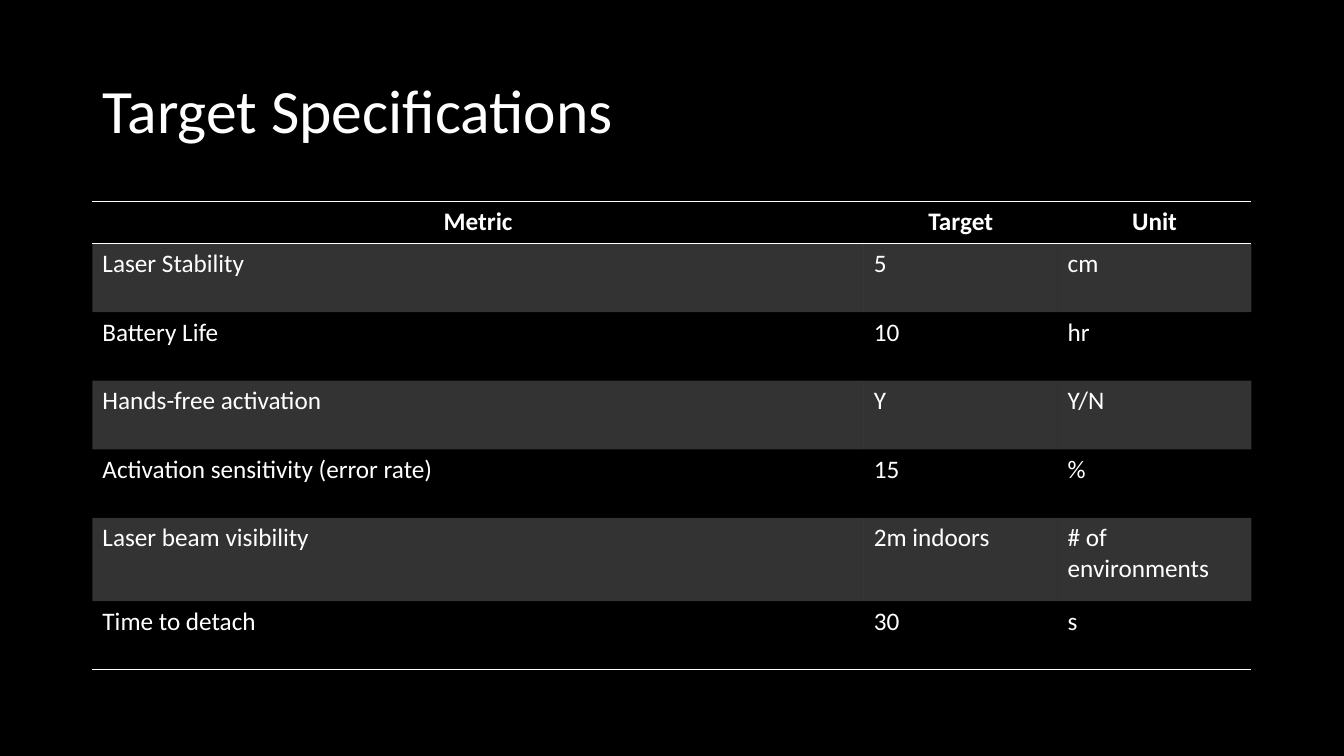
from lxml.etree import SubElement
from pptx import Presentation
from pptx.dml.color import RGBColor
from pptx.enum.text import MSO_ANCHOR, PP_ALIGN
from pptx.oxml.ns import qn
from pptx.util import Pt

BLACK = RGBColor(0, 0, 0)
WHITE = RGBColor(255, 255, 255)
FONT = "Calibri"
COLUMN_WIDTHS = [551, 138.5, 138.5]
ROW_HEIGHTS = [30, 49, 49, 49, 49, 59.5, 49]
SPECIFICATIONS = [
    ("Metric", "Target", "Unit"),
    ("Laser Stability", "5", "cm"),
    ("Battery Life", "10", "hr"),
    ("Hands-free activation", "Y", "Y/N"),
    ("Activation sensitivity (error rate)", "15", "%"),
    ("Laser beam visibility", "2m indoors", "# of environments"),
    ("Time to detach", "30", "s"),
]
LEFT_ALIGNED = ("%", "# of environments")


def add_run(paragraph, text, size, bold=False):
    run = paragraph.add_run()
    run.text = text
    run.font.name = FONT
    run.font.size = Pt(size)
    run.font.bold = bold
    run.font.color.rgb = WHITE


def set_title(slide, text):
    title = slide.shapes.title
    title.left, title.top = Pt(66), Pt(28.75)
    title.width, title.height = Pt(828), Pt(104.5)
    frame = title.text_frame
    frame.word_wrap = True
    frame.vertical_anchor = MSO_ANCHOR.MIDDLE
    paragraph = frame.paragraphs[0]
    paragraph.alignment = PP_ALIGN.LEFT
    paragraph.line_spacing = 0.9
    add_run(paragraph, text, 44)


def set_borders(cell, ruled_sides):
    properties = cell._tc.get_or_add_tcPr()
    for side in "LRTB":
        line = SubElement(properties, qn(f"a:ln{side}"), w=str(Pt(1)))
        if side in ruled_sides:
            fill = SubElement(line, qn("a:solidFill"))
            SubElement(fill, qn("a:srgbClr"), val=str(WHITE))
        else:
            SubElement(line, qn("a:noFill"))


def set_fill(cell, shaded):
    if not shaded:
        cell.fill.background()
        return
    cell.fill.solid()
    cell.fill.fore_color.rgb = WHITE
    color = cell._tc.tcPr.find(f"{qn('a:solidFill')}/{qn('a:srgbClr')}")
    SubElement(color, qn("a:alpha"), val="20000")


def cell_alignment(text, is_header):
    if is_header:
        return PP_ALIGN.CENTER
    return PP_ALIGN.LEFT if text in LEFT_ALIGNED else PP_ALIGN.JUSTIFY


def add_specification_table(slide):
    row_count, column_count = len(SPECIFICATIONS), len(COLUMN_WIDTHS)
    table = slide.shapes.add_table(
        row_count, column_count, Pt(66), Pt(144),
        Pt(sum(COLUMN_WIDTHS)), Pt(sum(ROW_HEIGHTS))).table
    table.first_row = False
    table.horz_banding = False
    for column, width in zip(table.columns, COLUMN_WIDTHS):
        column.width = Pt(width)
    for row, height in zip(table.rows, ROW_HEIGHTS):
        row.height = Pt(height)

    ruled_sides = {0: "TB", 1: "T", row_count - 1: "B"}
    for row_index, texts in enumerate(SPECIFICATIONS):
        is_header = row_index == 0
        for column_index, text in enumerate(texts):
            cell = table.cell(row_index, column_index)
            set_borders(cell, ruled_sides.get(row_index, ""))
            set_fill(cell, row_index % 2 == 1)
            paragraph = cell.text_frame.paragraphs[0]
            paragraph.alignment = cell_alignment(text, is_header)
            add_run(paragraph, text, 18, is_header)


def main():
    presentation = Presentation()
    presentation.slide_width, presentation.slide_height = Pt(960), Pt(540)
    slide = presentation.slides.add_slide(presentation.slide_layouts[5])
    slide.background.fill.solid()
    slide.background.fill.fore_color.rgb = BLACK
    set_title(slide, "Target Specifications")
    add_specification_table(slide)
    presentation.save("out.pptx")


if __name__ == "__main__":
    main()
